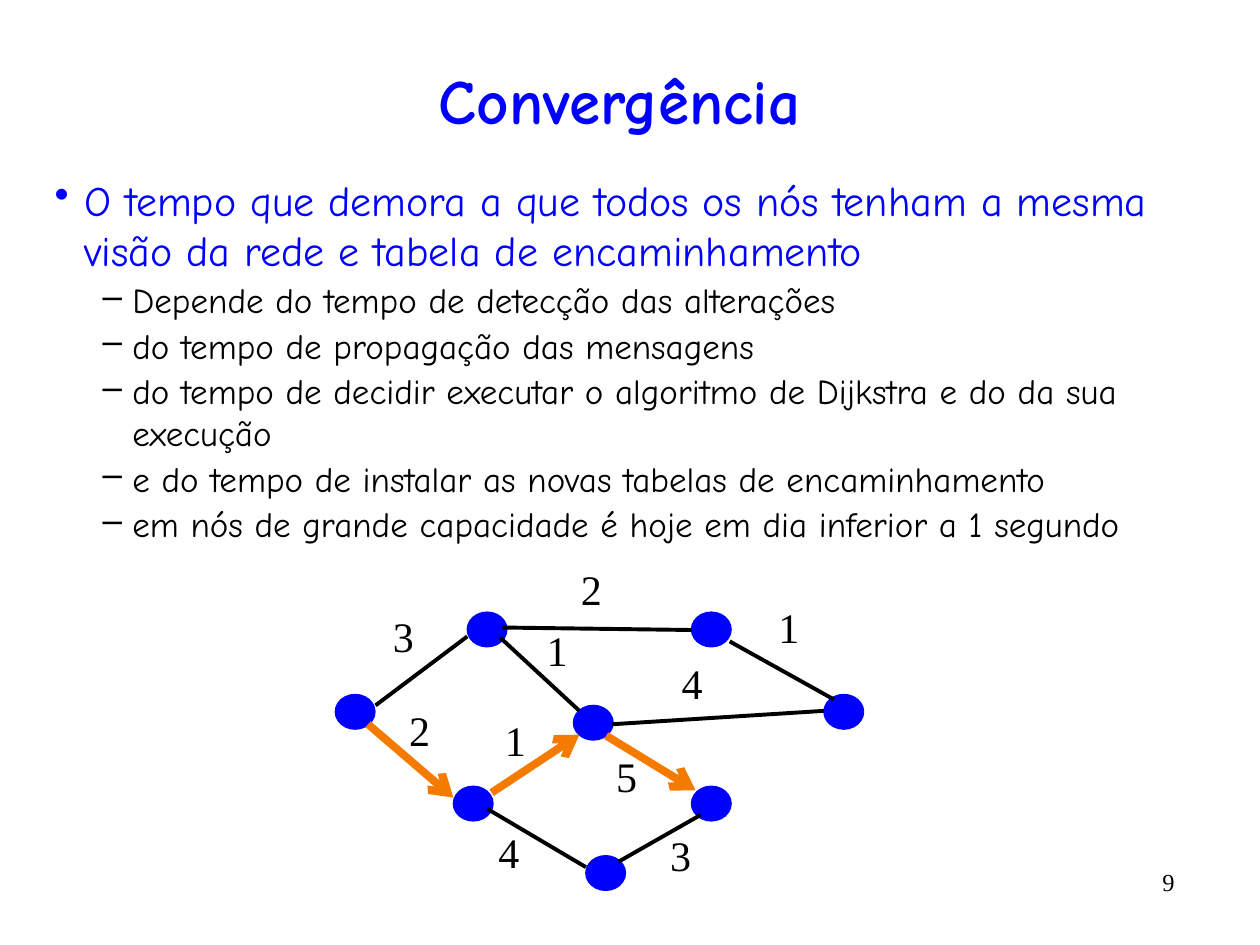
from lxml.etree import SubElement
from pptx import Presentation
from pptx.dml.color import RGBColor
from pptx.enum.shapes import MSO_CONNECTOR, MSO_SHAPE
from pptx.enum.text import MSO_ANCHOR, PP_ALIGN
from pptx.oxml.ns import qn
from pptx.util import Cm, Pt

COLORS = {"blue": "0000FF", "black": "000000", "route": "F47A00"}
HEADING_FONT = "Comic Neue"
NUMBER_FONT = "Times New Roman"


def color(name):
    return RGBColor.from_string(COLORS[name])


def write(paragraph, text, size, font=NUMBER_FONT, fill="black", bold=False,
          align=PP_ALIGN.LEFT, bullet=None, level=0, indent=0, before=0):
    """Put one formatted run in the paragraph, with a hanging bullet if given."""
    paragraph.alignment = align
    paragraph.level = level
    paragraph.space_before = Pt(before)
    run = paragraph.add_run()
    run.text = text
    run.font.size = Pt(size)
    run.font.name = font
    run.font.bold = bold
    run.font.color.rgb = color(fill)
    if bullet:
        properties = paragraph._p.get_or_add_pPr()
        properties.set("marL", str(Cm(indent)))
        properties.set("indent", str(-Cm(0.6)))
        SubElement(properties, qn("a:buChar"), char=bullet)


prs = Presentation()
prs.slide_width, prs.slide_height = Cm(25.4), Cm(19.05)
slide = prs.slides.add_slide(prs.slide_layouts[5])
shapes = slide.shapes

# Title
title = shapes.title
title.left, title.top, title.width, title.height = Cm(0.85), Cm(1.06), Cm(23.28), Cm(1.9)
title.text_frame.vertical_anchor = MSO_ANCHOR.MIDDLE
write(title.text_frame.paragraphs[0], "Convergência", 36, font=HEADING_FONT,
      fill="blue", bold=True, align=PP_ALIGN.CENTER)

# Definition and the factors it depends on
definition = ("O tempo que demora a que todos os nós tenham a mesma visão da rede "
              "e tabela de encaminhamento")
factors = [
    "Depende do tempo de detecção das alterações",
    "do tempo de propagação das mensagens",
    "do tempo de decidir executar o algoritmo de Dijkstra e do da sua execução",
    "e do tempo de instalar as novas tabelas de encaminhamento",
    "em nós de grande capacidade é hoje em dia inferior a 1 segundo",
]
body = shapes.add_textbox(Cm(0.85), Cm(3.39), Cm(23.92), Cm(15.24)).text_frame
body.word_wrap = True
write(body.paragraphs[0], definition, 24, font=HEADING_FONT, fill="blue",
      bullet="•", indent=0.6)
for factor in factors:
    write(body.add_paragraph(), factor, 20, font=HEADING_FONT,
          bullet="–", level=1, indent=1.57, before=2)

# Network nodes: left, top
nodes = [
    (6.76, 14), (9.14, 15.85), (9.42, 12.34), (11.56, 14.22),
    (13.94, 15.85), (13.94, 12.34), (11.81, 17.25), (16.61, 14),
]
for left, top in nodes:
    node = shapes.add_shape(MSO_SHAPE.OVAL, Cm(left), Cm(top), Cm(0.8), Cm(0.7))
    node.shadow.inherit = False
    node.fill.solid()
    node.fill.fore_color.rgb = color("blue")
    node.line.color.rgb = color("blue")
    node.line.width = Pt(0.75)

# Network links: start, end, cost, cost position, on the chosen route
links = [
    ((7.57, 14.22), (9.42, 12.83), 3, (7.67, 12.19), False),
    ((7.42, 14.6), (9.14, 16.08), 2, (8, 14.07), True),
    ((10.08, 12.85), (11.68, 14.33), 1, (10.77, 12.47), False),
    ((9.83, 16.31), (11.81, 17.48), 4, (9.8, 16.54), False),
    ((9.91, 15.98), (11.68, 14.81), 1, (9.93, 14.27), True),
    ((12.22, 14.83), (14.02, 15.93), 5, (12.17, 15.01), True),
    ((12.47, 17.37), (14.12, 16.43), 3, (13.26, 16.59), False),
    ((12.34, 14.6), (16.61, 14.33), 4, (13.49, 13.13), False),
    ((10.13, 12.65), (13.94, 12.7), 2, (11.46, 11.23), False),
    ((14.71, 12.93), (16.81, 14.1), 1, (15.44, 12.01), False),
]
for start, end, cost, cost_at, on_route in links:
    link = shapes.add_connector(MSO_CONNECTOR.STRAIGHT, *map(Cm, start + end))
    link.line.color.rgb = color("route" if on_route else "black")
    link.line.width = Pt(4.5 if on_route else 2.25)
    if on_route:
        SubElement(link.line._get_or_add_ln(), qn("a:tailEnd"), type="arrow")
    SubElement(link._element.spPr, qn("a:effectLst"))

    cost_label = shapes.add_textbox(*map(Cm, cost_at), Cm(0.94), Cm(1.27)).text_frame
    cost_label.word_wrap = False
    write(cost_label.paragraphs[0], str(cost), 24)

# Slide number
page = shapes.add_textbox(Cm(21.39), Cm(17.35), Cm(2.54), Cm(1.06)).text_frame
page.word_wrap = True
write(page.paragraphs[0], "9", 14, align=PP_ALIGN.RIGHT)

prs.save("out.pptx")
